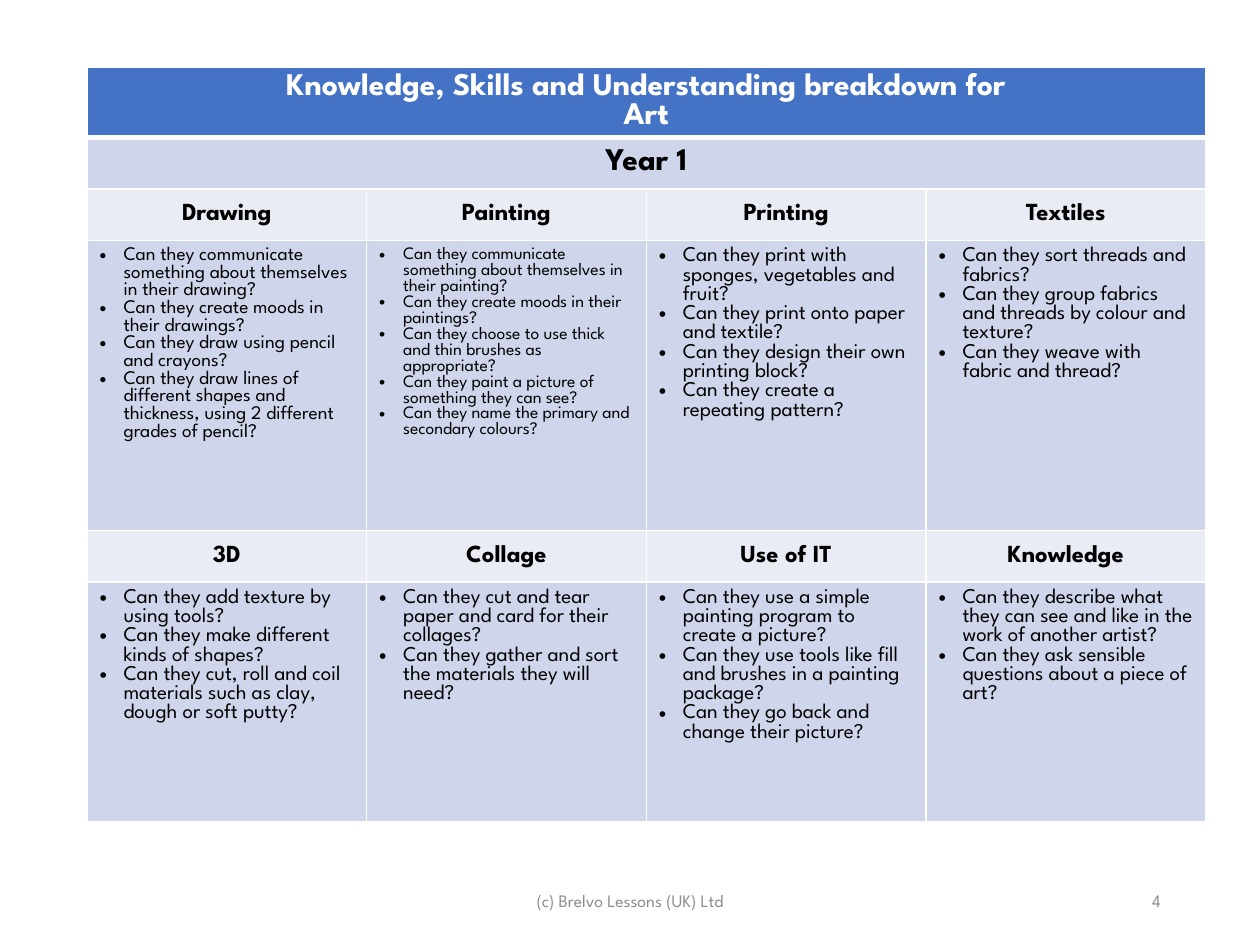
from lxml.etree import SubElement
from pptx import Presentation
from pptx.dml.color import RGBColor
from pptx.enum.text import MSO_ANCHOR, PP_ALIGN
from pptx.oxml.ns import qn
from pptx.util import Inches, Pt

FONT = "League Spartan"
COLORS = {
    "title": "4472C4", "body": "CFD5EA", "heading": "E9EBF5",
    "white": "FFFFFF", "black": "000000", "footer": "8C8C8C",
}

TITLE = ["Knowledge, Skills and Understanding breakdown for", "Art"]
YEAR = "Year 1"
# Each strand: heading, size of its questions, questions
STRANDS = [
    [
        ("Drawing", 11, [
            "Can they communicate something about themselves in their drawing?",
            "Can they create moods in their drawings?",
            "Can they draw using pencil and crayons?",
            "Can they draw lines of different shapes and thickness, using 2 different grades of pencil?",
        ]),
        ("Painting", 10, [
            "Can they communicate something about themselves in their painting?",
            "Can they create moods in their paintings?",
            "Can they choose to use thick and thin brushes as appropriate?",
            "Can they paint a picture of something they can see?",
            "Can they name the primary and secondary colours?",
        ]),
        ("Printing", 12, [
            "Can they print with sponges, vegetables and fruit?",
            "Can they print onto paper and textile?",
            "Can they design their own printing block?",
            "Can they create a repeating pattern?",
        ]),
        ("Textiles", 12, [
            "Can they sort threads and fabrics?",
            "Can they group fabrics and threads by colour and texture?",
            "Can they weave with fabric and thread?",
        ]),
    ],
    [
        ("3D", 12, [
            "Can they add texture by using tools?",
            "Can they make different kinds of shapes?",
            "Can they cut, roll and coil materials such as clay, dough or soft putty?",
        ]),
        ("Collage", 12, [
            "Can they cut and tear paper and card for their collages?",
            "Can they gather and sort the materials they will need?",
        ]),
        ("Use of IT", 12, [
            "Can they use a simple painting program to create a picture?",
            "Can they use tools like fill and brushes in a painting package?",
            "Can they go back and change their picture?",
        ]),
        ("Knowledge", 12, [
            "Can they describe what they can see and like in the work of another artist?",
            "Can they ask sensible questions about a piece of art?",
        ]),
    ],
]
# Footer texts: text, left, width, alignment
FOOTERS = [
    ("(c) Brelvo Lessons (UK) Ltd", 3.31, 3.38, PP_ALIGN.CENTER),
    ("4", 7.06, 2.25, PP_ALIGN.RIGHT),
]
LEFT, TOP, COL_WIDTH = 0.69, 0.53, 2.22
ROW_HEIGHTS = [0.41, 0.41, 0.41, 2.3, 0.41, 1.9]
ROW_FILLS = ["title", "body", "heading", "body", "heading", "body"]


def add_bullet(p):
    pPr = p._p.get_or_add_pPr()
    pPr.set("marL", str(Inches(0.19)))
    pPr.set("indent", str(Inches(-0.19)))
    SubElement(pPr, qn("a:buFont"), typeface="Arial")
    SubElement(pPr, qn("a:buChar"), char="•")


def write(tf, lines, size=12, color="black", bold=False,
          align=PP_ALIGN.LEFT, bullets=False):
    for i, line in enumerate(lines):
        p = tf.paragraphs[0] if i == 0 else tf.add_paragraph()
        p.alignment = align
        if bullets:
            add_bullet(p)
        r = p.add_run()
        r.text = line
        r.font.name, r.font.size, r.font.bold = FONT, Pt(size), bold
        r.font.color.rgb = RGBColor.from_string(COLORS[color])


def set_borders(cell, **widths):
    """Draw white cell borders, 1 pt unless a side's width is given."""
    tcPr = cell._tc.get_or_add_tcPr()
    for i, side in enumerate("LRTB"):
        ln = SubElement(tcPr, qn(f"a:ln{side}"), w=str(Pt(widths.get(side, 1))))
        fill = SubElement(ln, qn("a:solidFill"))
        SubElement(fill, qn("a:srgbClr"), val=COLORS["white"])
        tcPr.insert(i, ln)


def set_margins(cell, x, y):
    cell.margin_left = cell.margin_right = Inches(x)
    cell.margin_top = cell.margin_bottom = Inches(y)


def add_strand(table, row, col, heading, size, questions):
    head, body = table.cell(row, col), table.cell(row + 1, col)
    set_margins(head, 0.07, 0)
    head.vertical_anchor = MSO_ANCHOR.MIDDLE
    write(head.text_frame, [heading], size=14, bold=True, align=PP_ALIGN.CENTER)
    write(body.text_frame, questions, size=size, bullets=True)


def add_skills_table(s):
    cols = len(STRANDS[0])
    table = s.shapes.add_table(
        len(ROW_HEIGHTS), cols, Inches(LEFT), Inches(TOP),
        Inches(COL_WIDTH * cols), Inches(sum(ROW_HEIGHTS))).table
    table.first_row = table.horz_banding = False
    for col in table.columns:
        col.width = Inches(COL_WIDTH)
    for i, (height, fill) in enumerate(zip(ROW_HEIGHTS, ROW_FILLS)):
        table.rows[i].height = Inches(height)
        for cell in table.rows[i].cells:
            cell.fill.solid()
            cell.fill.fore_color.rgb = RGBColor.from_string(COLORS[fill])
            set_margins(cell, 0.1, 0.05)
            set_borders(cell, **({"B": 3} if i == 0 else {"T": 3} if i == 1 else {}))

    for i, (lines, color) in enumerate([(TITLE, "white"), ([YEAR], "black")]):
        cell = table.cell(i, 0)
        cell.merge(table.cell(i, cols - 1))
        write(cell.text_frame, lines, size=18, color=color, bold=True,
              align=PP_ALIGN.CENTER)
    table.cell(1, 0).vertical_anchor = MSO_ANCHOR.MIDDLE

    for band, strands in enumerate(STRANDS):
        for col, strand in enumerate(strands):
            add_strand(table, 2 + 2 * band, col, *strand)


def main():
    prs = Presentation()
    prs.slide_width, prs.slide_height = Inches(10), Inches(7.5)
    s = prs.slides.add_slide(prs.slide_layouts[6])
    add_skills_table(s)
    for text, left, width, align in FOOTERS:
        tf = s.shapes.add_textbox(
            Inches(left), Inches(6.95), Inches(width), Inches(0.4)).text_frame
        tf.word_wrap = True
        tf.vertical_anchor = MSO_ANCHOR.MIDDLE
        write(tf, [text], size=10, color="footer", align=align)
    prs.save("out.pptx")


if __name__ == "__main__":
    main()
